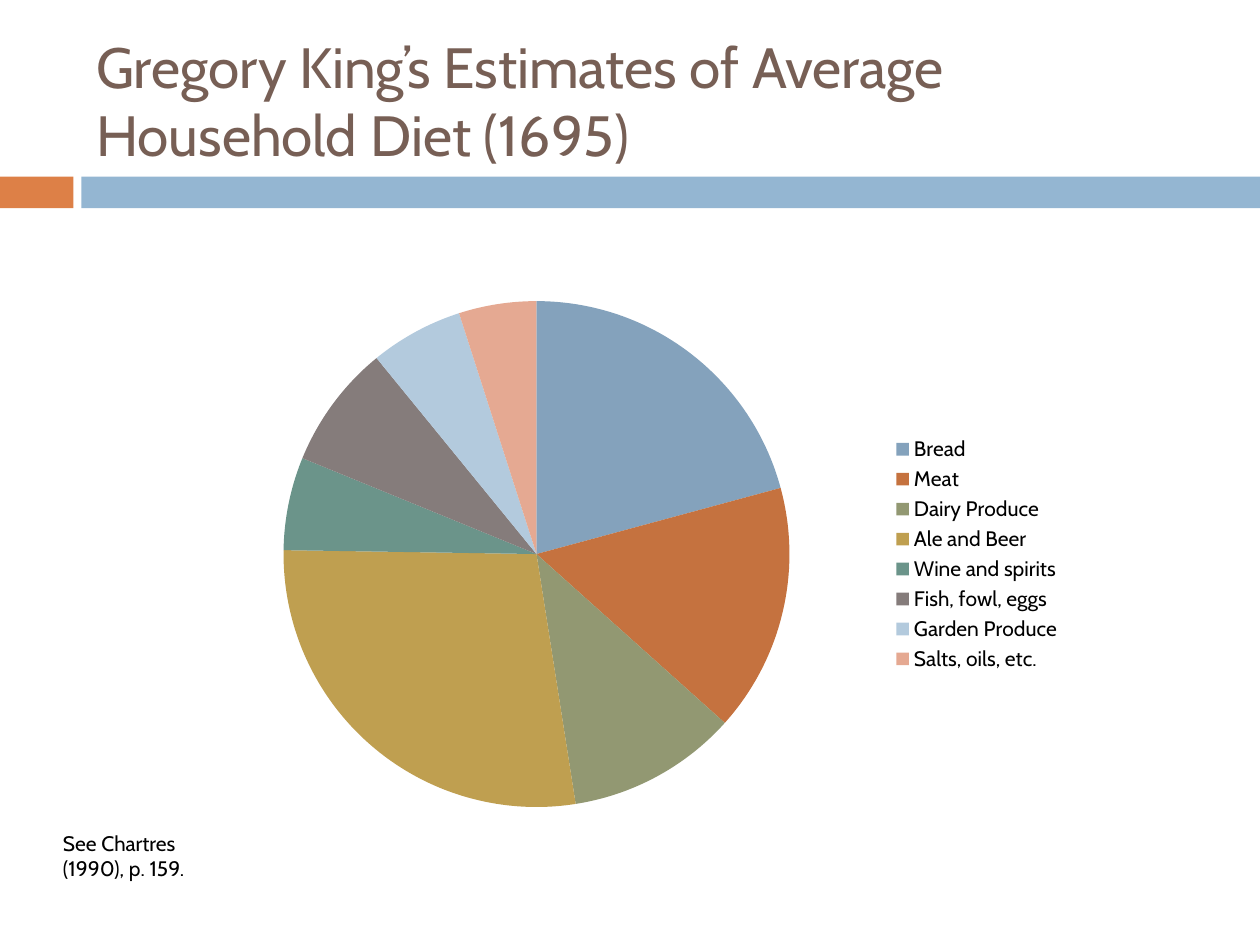
from dataclasses import dataclass

from pptx import Presentation
from pptx.chart.data import CategoryChartData
from pptx.dml.color import RGBColor
from pptx.enum.chart import XL_CHART_TYPE, XL_LEGEND_POSITION
from pptx.enum.shapes import MSO_SHAPE
from pptx.enum.text import MSO_ANCHOR
from pptx.util import Cm, Pt


@dataclass(frozen=True)
class Theme:
    font: str = "Cabin"
    title: str = "775F55"
    ink: str = "000000"
    accent: str = "DD8047"
    band: str = "94B6D2"
    pie: tuple = ("84A2BC", "C5723F", "929872", "BF9F50",
                  "6B948A", "857C7B", "B3CADD", "E5A992")
    big: float = 32.4
    small: float = 12


DIET = {
    "Bread": 21,
    "Meat": 16,
    "Dairy Produce": 11,
    "Ale and Beer": 28,
    "Wine and spirits": 6,
    "Fish, fowl, eggs": 8,
    "Garden Produce": 6,
    "Salts, oils, etc.": 5,
}


def paint(fill, color):
    fill.solid()
    fill.fore_color.rgb = RGBColor.from_string(color)


def style(font, name, size, color):
    font.name = name
    font.size = Pt(size)
    font.color.rgb = RGBColor.from_string(color)


def write(frame, text, *, name, size, color, anchor=MSO_ANCHOR.TOP):
    frame.word_wrap = True
    frame.vertical_anchor = anchor
    run = frame.paragraphs[0].add_run()
    run.text = text
    style(run.font, name, size, color)


class Page:
    def __init__(self, slide, theme):
        self.slide = slide
        self.theme = theme

    def bar(self, box, color):
        shape = self.slide.shapes.add_shape(MSO_SHAPE.RECTANGLE, *map(Cm, box))
        shape.shadow.inherit = False
        paint(shape.fill, color)
        shape.line.fill.background()

    def text(self, box, text, **look):
        shape = self.slide.shapes.add_textbox(*map(Cm, box))
        write(shape.text_frame, text, name=self.theme.font, **look)

    def pie(self, box, parts):
        data = CategoryChartData()
        data.categories = list(parts)
        data.add_series("Series 1", list(parts.values()))
        chart = self.slide.shapes.add_chart(
            XL_CHART_TYPE.PIE, *map(Cm, box), data).chart
        chart.has_title = False
        look = self.theme.font, self.theme.small, self.theme.ink
        style(chart.font, *look)

        # Slices
        plot = chart.plots[0]
        plot.vary_by_categories = True
        for i, color in enumerate(self.theme.pie):
            point = plot.series[0].points[i]
            paint(point.format.fill, color)
            point.format.line.fill.background()

        # Legend
        chart.has_legend = True
        chart.legend.position = XL_LEGEND_POSITION.RIGHT
        chart.legend.include_in_layout = False
        style(chart.legend.font, *look)


def main():
    deck = Presentation()
    deck.slide_width, deck.slide_height = Cm(25.4), Cm(19.05)
    theme = Theme()
    page = Page(deck.slides.add_slide(deck.slide_layouts[6]), theme)

    # Header bars
    page.bar((0, 3.56, 1.48, 0.64), theme.accent)
    page.bar((1.64, 3.56, 23.76, 0.64), theme.band)

    # Title
    page.text((1.69, 0.64, 22.66, 2.75),
              "Gregory King’s Estimates of Average Household Diet (1695)",
              size=theme.big, color=theme.title, anchor=MSO_ANCHOR.MIDDLE)

    # Diet chart
    page.pie((3.7, 5.72, 17.96, 10.9), DIET)

    # Reference
    page.text((1.02, 16.61, 3.18, 1.28), "See Chartres (1990), p. 159.",
              size=theme.small, color=theme.ink)

    deck.save("out.pptx")


if __name__ == "__main__":
    main()
